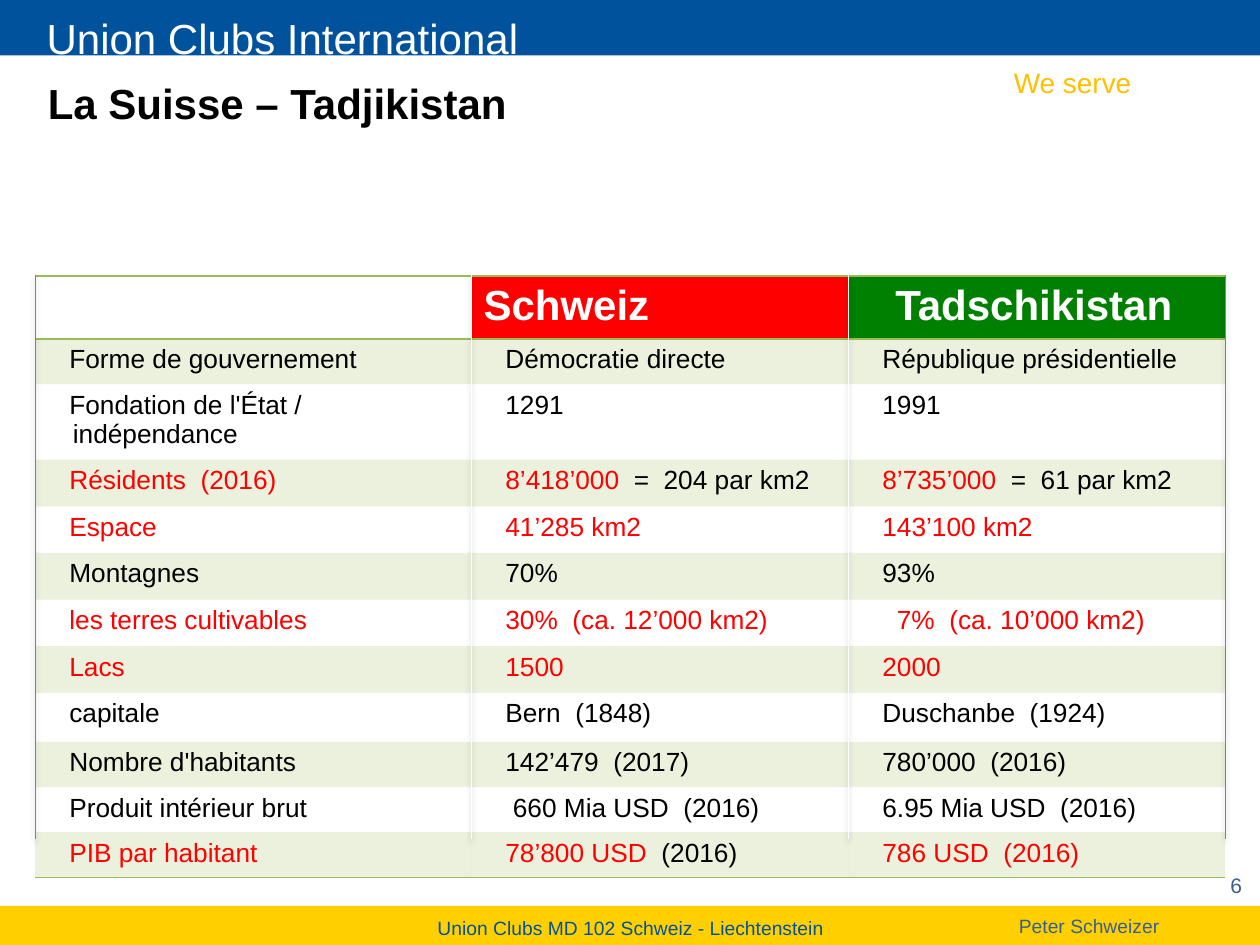
from dataclasses import dataclass
from itertools import accumulate
from typing import NamedTuple

from lxml.etree import SubElement
from pptx import Presentation
from pptx.dml.color import RGBColor
from pptx.enum.shapes import MSO_CONNECTOR as Connector, MSO_SHAPE as Shape
from pptx.enum.text import MSO_ANCHOR as Anchor, PP_ALIGN as Align
from pptx.oxml.ns import qn
from pptx.util import Cm, Pt

BLUE, YELLOW, STEEL = "00529C", "FFCF00", "376092"
BLACK, WHITE, RED, GREEN = "000000", "FFFFFF", "FF0000", "008000"
OLIVE, DARK_OLIVE = "9BBB59", "77933C"
NO_TABLE_STYLE = "{2D5ABB26-0587-4C30-8999-92F81FD0307C}"


class Span(NamedTuple):
    text: str
    color: str


class Label(NamedTuple):
    text: str
    left: float
    top: float
    width: float
    height: float
    size: int
    color: str
    align: Align = Align.LEFT
    anchor: Anchor = Anchor.TOP
    wrap: bool = True


@dataclass
class Row:
    height: float
    topic: str
    swiss: str | list[Span]
    tajik: str | list[Span]
    color: str = BLACK
    swiss_shift: float = 0
    tajik_shift: float = 0


def rgb(color: str) -> RGBColor:
    return RGBColor.from_string(color)


def write(frame, text, *, size: float, color: str = BLACK, bold: bool = False,
          align: Align = Align.LEFT):
    """Write a string or a list of spans as one paragraph."""
    para = frame.paragraphs[0]
    para.alignment = align
    for part in [Span(text, color)] if isinstance(text, str) else text:
        span = para.add_run()
        span.text = part.text
        span.font.name = "Arial"
        span.font.size = Pt(size)
        span.font.bold = bold
        span.font.color.rgb = rgb(part.color)
    return para


def add_bar(page, top: float, height: float, color: str) -> None:
    bar = page.shapes.add_shape(Shape.RECTANGLE, 0, Cm(top), Cm(25.4), Cm(height))
    bar.shadow.inherit = False
    bar.fill.solid()
    bar.fill.fore_color.rgb = rgb(color)
    bar.line.fill.background()


def add_label(page, label: Label) -> None:
    box = page.shapes.add_textbox(Cm(label.left), Cm(label.top), Cm(label.width), Cm(label.height))
    frame = box.text_frame
    frame.word_wrap = label.wrap
    frame.vertical_anchor = label.anchor
    write(frame, label.text, size=label.size, color=label.color, align=label.align)


def add_borders(cell, sides: str) -> None:
    """Draw olive 1 pt borders on the given sides (T, B)."""
    properties = cell._tc.get_or_add_tcPr()
    for side in sides:
        line = SubElement(properties, qn(f"a:ln{side}"), w=str(Pt(1)))
        fill = SubElement(line, qn("a:solidFill"))
        SubElement(fill, qn("a:srgbClr"), val=OLIVE)


def fill_cell(cell, color: str | None, opacity: int = 100) -> None:
    if color is None:
        cell.fill.background()
        return
    cell.fill.solid()
    cell.fill.fore_color.rgb = rgb(color)
    if opacity < 100:
        tint = cell._tc.tcPr.find(qn("a:solidFill")).find(qn("a:srgbClr"))
        SubElement(tint, qn("a:alpha"), val=str(opacity * 1000))


def add_column_line(page, x: float, color: str) -> None:
    line = page.shapes.add_connector(Connector.STRAIGHT, Cm(x), Cm(5.54), Cm(x), Cm(16.92))
    line.line.color.rgb = rgb(color)
    line.line.width = Pt(0.25)
    effects = SubElement(line._element.spPr, qn("a:effectLst"))
    shadow = SubElement(effects, qn("a:outerShdw"), blurRad=str(Pt(3.1)), dist=str(Pt(1.6)),
                        dir="5400000", rotWithShape="0")
    tint = SubElement(shadow, qn("a:srgbClr"), val=BLACK)
    SubElement(tint, qn("a:alpha"), val="38000")


def add_comparison(page, rows: list[Row], left: float, widths: list[float]) -> None:
    graphic = page.shapes.add_table(len(rows) + 1, len(widths), Cm(left), Cm(5.56),
                                    Cm(sum(widths)), Cm(11.96))
    table = graphic.table
    graphic._element.find(".//" + qn("a:tableStyleId")).text = NO_TABLE_STYLE
    for column, width in zip(table.columns, widths):
        column.width = Cm(width)

    # Heading row
    table.rows[0].height = Cm(1)
    headings = [("", None, 0.25), ("Schweiz", RED, 0.25), ("Tadschikistan", GREEN, 0.95)]
    for cell, (text, color, margin) in zip(table.rows[0].cells, headings):
        add_borders(cell, "TB")
        fill_cell(cell, color)
        cell.margin_left = Cm(margin)
        if text:
            write(cell.text_frame, text, size=24, color=WHITE, bold=True)

    # Banded body rows
    for index, row in enumerate(rows, 1):
        table.rows[index].height = Cm(row.height)
        contents = [(row.topic, 0), (row.swiss, row.swiss_shift), (row.tajik, row.tajik_shift)]
        for number, (text, shift) in enumerate(contents):
            cell = table.cell(index, number)
            if index == len(rows):
                add_borders(cell, "B")
            fill_cell(cell, OLIVE if index % 2 else None, 20)
            cell.margin_left = Cm(0.69 + shift)
            para = write(cell.text_frame, text, size=15, color=row.color)
            if number == 0:
                indent = para._p.get_or_add_pPr()
                indent.set("marL", str(Cm(0.07)))
                indent.set("indent", str(-Cm(0.07)))


ROWS = [
    Row(0.91, "Forme de gouvernement", "Démocratie directe", "République présidentielle"),
    Row(0.91, "Fondation de l'État / indépendance", "1291", "1991"),
    Row(0.94, "Résidents  (2016)",
        [Span("8’418’000", RED), Span("  =  204 par km2", BLACK)],
        [Span("8’735’000  ", RED), Span("=  61 par km2", BLACK)], RED),
    Row(0.94, "Espace", "41’285 km2", "143’100 km2", RED),
    Row(0.94, "Montagnes", "70%", "93%"),
    Row(0.94, "les terres cultivables", "30%  (ca. 12’000 km2)", "7%  (ca. 10’000 km2)", RED,
        tajik_shift=0.29),
    Row(0.94, "Lacs", "1500", "2000", RED),
    Row(0.99, "capitale", "Bern  (1848)", "Duschanbe  (1924)"),
    Row(0.91, "Nombre d'habitants", "142’479  (2017)", "780’000  (2016)"),
    Row(0.91, "Produit intérieur brut", "660 Mia USD  (2016)", "6.95 Mia USD  (2016)",
        swiss_shift=0.15),
    Row(0.91, "PIB par habitant", [Span("78’800 USD", RED), Span("  (2016)", BLACK)],
        "786 USD  (2016)", RED),
]
LABELS = [
    Label("Union Clubs International", 0.69, 0.13, 23.93, 1.27, 24, WHITE),
    Label("We serve", 20.19, 1.19, 2.92, 0.94, 16, "FFC000", wrap=False),
    Label("Union Clubs MD 102 Schweiz - Liechtenstein", 0.03, 18.34, 25.37, 0.74, 11, BLUE,
          Align.CENTER),
    Label("Peter Schweizer", 20.29, 18.31, 3.4, 0.74, 11, STEEL),
    Label("6", 22.5, 17.53, 2.79, 0.64, 12, STEEL, Align.RIGHT, Anchor.MIDDLE),
]


def main() -> None:
    deck = Presentation()
    deck.slide_width, deck.slide_height = Cm(25.4), Cm(19.05)
    page = deck.slides.add_slide(deck.slide_layouts[5])

    # Header and footer
    add_bar(page, 0, 1.12, BLUE)
    add_bar(page, 18.26, 0.79, YELLOW)
    for label in LABELS:
        add_label(page, label)

    # Title
    title = page.shapes.title
    title.left, title.top, title.width, title.height = Cm(0.71), Cm(1.57), Cm(19.1), Cm(1.02)
    title.text_frame.vertical_anchor = Anchor.MIDDLE
    write(title.text_frame, "La Suisse – Tadjikistan", size=24, bold=True)

    # Table and column lines
    left, widths = 0.71, [8.79, 7.6, 7.6]
    add_comparison(page, ROWS, left, widths)
    edges = accumulate(widths, initial=left)
    for x, color in zip(edges, [DARK_OLIVE, WHITE, WHITE, DARK_OLIVE]):
        add_column_line(page, x, color)

    deck.save("out.pptx")


if __name__ == "__main__":
    main()
